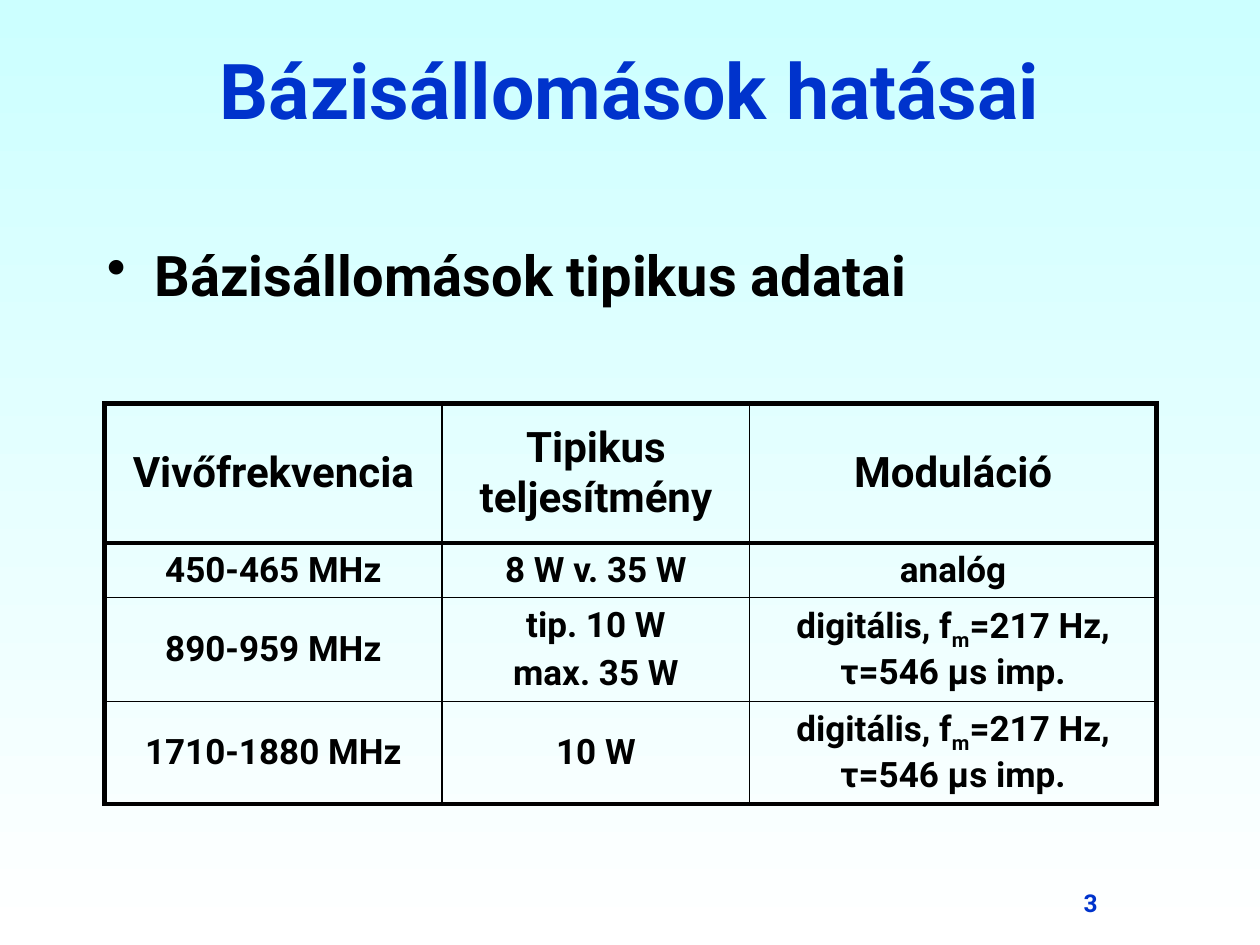
from lxml import etree
from pptx import Presentation
from pptx.dml.color import RGBColor
from pptx.enum.text import MSO_ANCHOR, PP_ALIGN
from pptx.oxml.ns import qn
from pptx.util import Inches, Pt

LEFT, CENTER, RIGHT = PP_ALIGN.LEFT, PP_ALIGN.CENTER, PP_ALIGN.RIGHT
TOP, MIDDLE = MSO_ANCHOR.TOP, MSO_ANCHOR.MIDDLE

FONT, BLUE, BLACK = "Roboto", "0033CC", "000000"
SKY, WHITE = "CCFFFF", "FFFFFF"
THICK, THIN = 3, 1

# Content: a cell is a list of paragraphs, a paragraph a list of (text, is subscript)
TITLE = "Bázisállomások hatásai"
BULLET = "Bázisállomások tipikus adatai"
PAGE_NUMBER = "3"
DIGITAL = [[("digitális, f", False), ("m", True), ("=217 Hz, τ=546 µs imp.", False)]]
ROWS = [
    ["Vivőfrekvencia", "Tipikus teljesítmény", "Moduláció"],
    ["450-465 MHz", "8 W v. 35 W", "analóg"],
    ["890-959 MHz", ["tip. 10 W", "max. 35 W"], DIGITAL],
    ["1710-1880 MHz", "10 W", DIGITAL],
]
COLUMN_WIDTHS = [2.68, 2.44, 3.23]
ROW_HEIGHTS = [1.11, 0.43, 0.8, 0.8]
TABLE_LEFT, TABLE_TOP = 0.83, 3.2


def color(value):
    return RGBColor.from_string(value)


def write(frame, text, size=20, fill=BLACK, align=CENTER, bullet=None):
    """Fill a text frame with one or more paragraphs in one format."""
    paragraphs = text if isinstance(text, list) else [text]
    for index, content in enumerate(paragraphs):
        para = frame.add_paragraph() if index else frame.paragraphs[0]
        para.alignment = align
        if index:
            para.space_before = Pt(size * 0.2)
        if bullet:
            properties = para._p.get_or_add_pPr()
            properties.set("marL", str(Inches(0.38)))
            properties.set("indent", str(-Inches(0.38)))
            etree.SubElement(properties, qn("a:buChar")).set("char", bullet)
        spans = content if isinstance(content, list) else [(content, False)]
        for words, is_subscript in spans:
            span = para.add_run()
            span.text = words
            span.font.name, span.font.size, span.font.bold = FONT, Pt(size), True
            span.font.color.rgb = color(fill)
            if is_subscript:
                span._r.get_or_add_rPr().set("baseline", "-25000")


def add_text(page, text, area, anchor=TOP, **text_format):
    box = page.shapes.add_textbox(*(Inches(length) for length in area))
    box.text_frame.word_wrap = True
    box.text_frame.vertical_anchor = anchor
    write(box.text_frame, text, **text_format)


def set_borders(cell, widths):
    properties = cell._tc.get_or_add_tcPr()
    for side, width in zip("LRTB", widths):
        line = etree.SubElement(properties, qn(f"a:ln{side}"), w=str(Pt(width)))
        solid = etree.SubElement(line, qn("a:solidFill"))
        etree.SubElement(solid, qn("a:srgbClr"), val=BLACK)


def add_data_table(page):
    row_count, column_count = len(ROWS), len(COLUMN_WIDTHS)
    table = page.shapes.add_table(
        row_count, column_count, Inches(TABLE_LEFT), Inches(TABLE_TOP),
        Inches(sum(COLUMN_WIDTHS)), Inches(sum(ROW_HEIGHTS))).table
    table.first_row = table.horz_banding = False
    for column, width in zip(table.columns, COLUMN_WIDTHS):
        column.width = Inches(width)
    for row, height in zip(table.rows, ROW_HEIGHTS):
        row.height = Inches(height)

    # Thick lines frame the table and close the header row
    across = [THICK] + [THIN] * (column_count - 1) + [THICK]
    down = [THICK, THICK] + [THIN] * (row_count - 2) + [THICK]
    for r, texts in enumerate(ROWS):
        for c, text in enumerate(texts):
            cell = table.cell(r, c)
            cell.vertical_anchor = MIDDLE
            write(cell.text_frame, text, size=20 if r else 24)
            set_borders(cell, (across[c], across[c + 1], down[r], down[r + 1]))
            cell.fill.background()


def main():
    deck = Presentation()
    deck.slide_width, deck.slide_height = Inches(10), Inches(7.5)
    page = deck.slides.add_slide(deck.slide_layouts[6])

    # Background fades downwards
    backdrop = page.background.fill
    backdrop.gradient()
    backdrop.gradient_angle = 270
    for stop, shade in zip(backdrop.gradient_stops, (SKY, WHITE)):
        stop.color.rgb = color(shade)

    # Page number, title, bullet, table
    add_text(page, PAGE_NUMBER, (6.73, 7, 2.08, 0.5), size=14, fill=BLUE, align=RIGHT)
    add_text(page, TITLE, (0.75, 0.08, 8.5, 1.25), anchor=MIDDLE, size=44, fill=BLUE)
    add_text(page, BULLET, (0.75, 1.86, 8.5, 0.71), size=32, align=LEFT, bullet="•")
    add_data_table(page)
    deck.save("out.pptx")


if __name__ == "__main__":
    main()
